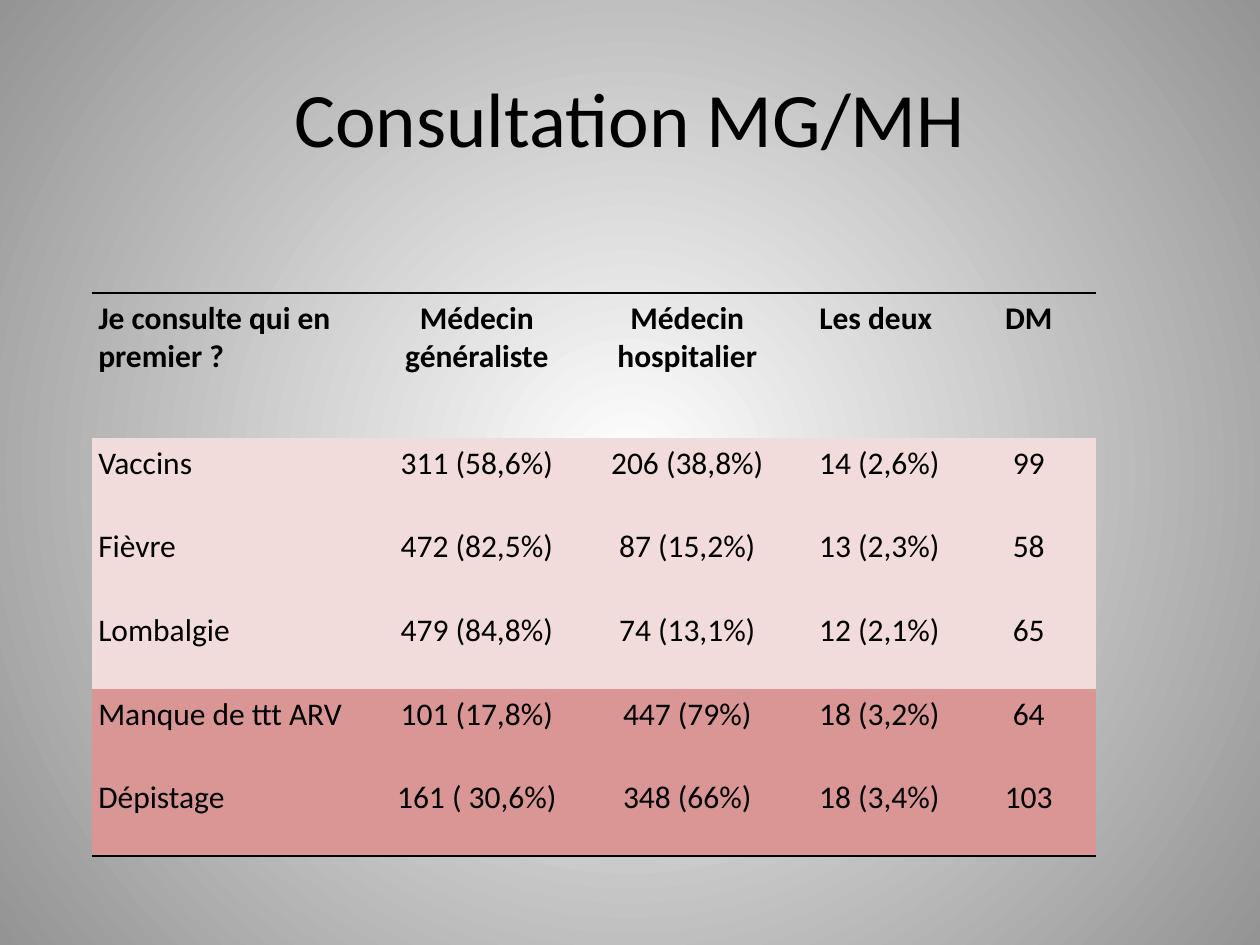
import dataclasses

import pptx
import pptx.dml.color
import pptx.enum.text
import pptx.oxml
import pptx.oxml.ns
import pptx.util


@dataclasses.dataclass(frozen=True)
class Theme:
    font: str = "Calibri"
    title_size: int = 44
    table_size: int = 18
    ink: str = "000000"
    centre: str = "FFFFFF"
    edge: str = "949494"
    light: str = "F2DCDB"
    dark: str = "D99694"


theme = Theme()
rgb = pptx.dml.color.RGBColor.from_string
align = pptx.enum.text.PP_ALIGN
anchor = pptx.enum.text.MSO_ANCHOR
qn = pptx.oxml.ns.qn
NS = pptx.oxml.ns.nsdecls("a")
INSET = pptx.util.Inches(0.05)
NO_STYLE = "{2D5ABB26-0587-4C30-8999-92F81FD0307C}"


def write(tf, text, size, bold=False, alignment=align.CENTER):
    p = tf.paragraphs[0]
    p.alignment = alignment
    r = p.add_run()
    r.text = text
    r.font.name = theme.font
    r.font.size = pptx.util.Pt(size)
    r.font.bold = bold
    r.font.color.rgb = rgb(theme.ink)


def add_border(cell, side, color=None):
    """Draw a 1 pt line on one side (T or B) of a cell; no colour means no line."""
    paint = f'<a:solidFill><a:srgbClr val="{color}"/></a:solidFill>' if color else "<a:noFill/>"
    cell._tc.get_or_add_tcPr().append(
        pptx.oxml.parse_xml(f'<a:ln{side} {NS} w="12700">{paint}</a:ln{side}>'))


prs = pptx.Presentation()
prs.slide_width = pptx.util.Inches(10)
prs.slide_height = pptx.util.Inches(7.5)
W, H = prs.slide_width, prs.slide_height
s = prs.slides.add_slide(prs.slide_layouts[6])

# Background: light centre fading to grey edges
fill = s.background.fill
fill.gradient()
for stop, color in zip(fill.gradient_stops, (theme.centre, theme.edge)):
    stop.color.rgb = rgb(color)
grad = s.element.find(".//" + qn("a:gradFill"))
grad.replace(grad.find(qn("a:lin")), pptx.oxml.parse_xml(
    f'<a:path {NS} path="circle"><a:fillToRect l="50000" t="50000" r="50000" b="50000"/></a:path>'))

# Title
title = s.shapes.add_textbox(int(W * 0.05), int(H * 0.04), int(W * 0.9), int(H / 6))
tf = title.text_frame
tf.word_wrap = True
tf.vertical_anchor = anchor.MIDDLE
tf.margin_left = tf.margin_right = tf.margin_top = tf.margin_bottom = INSET
write(tf, "Consultation MG/MH", theme.title_size)

# Table
rows = [
    (None, "Je consulte qui en premier ?", "Médecin généraliste", "Médecin hospitalier", "Les deux ", "DM"),
    (theme.light, "Vaccins", "311 (58,6%)", "206 (38,8%)", "14 (2,6%)", "99"),
    (theme.light, "Fièvre", "472 (82,5%)", "87 (15,2%)", "13 (2,3%)", "58"),
    (theme.light, "Lombalgie", "479 (84,8%)", "74 (13,1%)", "12 (2,1%)", "65"),
    (theme.dark, "Manque de ttt ARV", "101 (17,8%)", "447 (79%)", "18 (3,2%)", "64"),
    (theme.dark, "Dépistage", "161 ( 30,6%)", "348 (66%)", "18 (3,4%)", "103"),
]
col_shares = [22.6, 15.9, 17.5, 13, 10.7]  # percent of slide width
header_height, body_height = int(H * 1.15 / 7.5), int(H * 0.664 / 7.5)
table_height = header_height + body_height * (len(rows) - 1)
table = s.shapes.add_table(len(rows), len(col_shares), int(W * 0.073), int(H * 0.31),
                           int(W * sum(col_shares) / 100), table_height).table
table.first_row = table.horz_banding = False
table._tbl.tblPr.find(qn("a:tableStyleId")).text = NO_STYLE
for col, share in zip(table.columns, col_shares):
    col.width = int(W * share / 100)

last = len(rows) - 1
for i, (band, *texts) in enumerate(rows):
    table.rows[i].height = body_height if i else header_height
    for j, text in enumerate(texts):
        cell = table.cell(i, j)
        cell.margin_left = cell.margin_right = cell.margin_top = cell.margin_bottom = INSET
        write(cell.text_frame, text, theme.table_size, bold=i == 0,
              alignment=align.CENTER if j else align.LEFT)
        add_border(cell, "T", theme.ink if i == 0 else None)
        add_border(cell, "B", theme.ink if i == last else None)
        if band:
            cell.fill.solid()
            cell.fill.fore_color.rgb = rgb(band)
        else:
            cell.fill.background()

prs.save("out.pptx")
